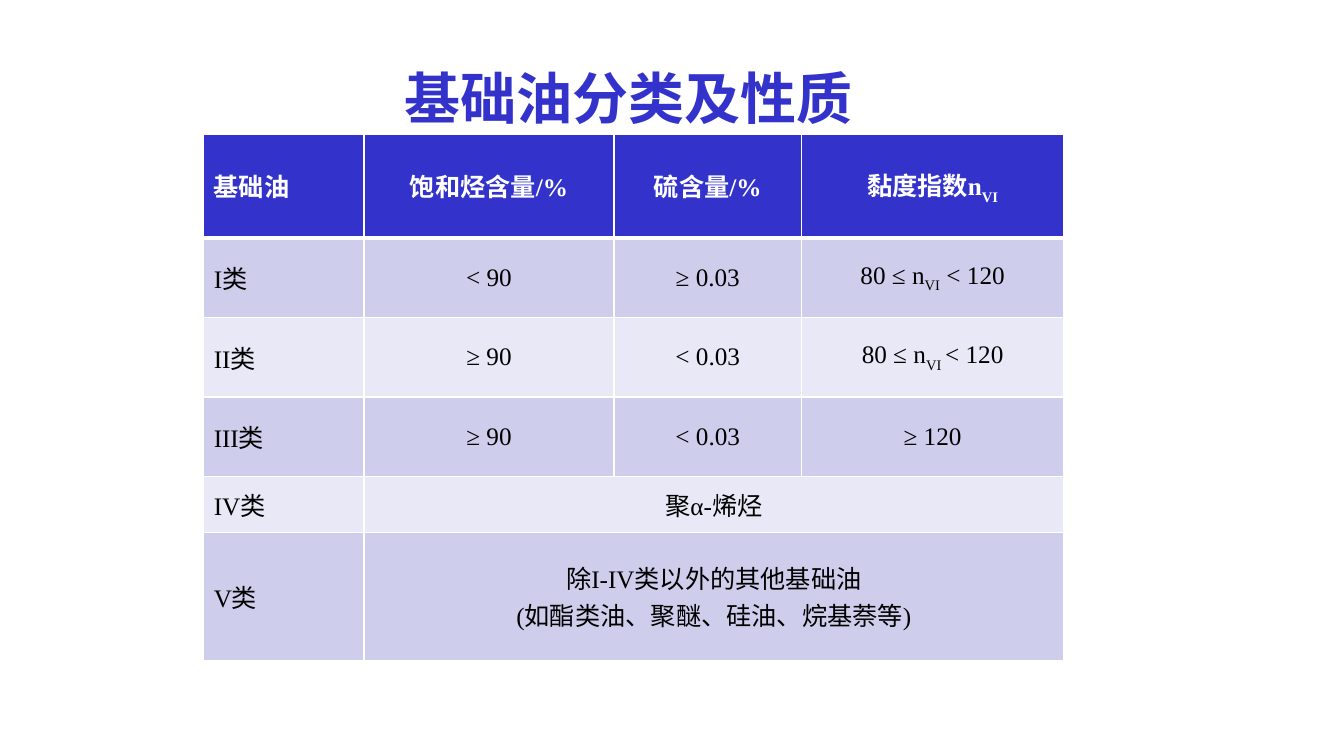
from lxml import etree
from pptx import Presentation
from pptx.dml.color import RGBColor
from pptx.enum import text as en
from pptx.oxml import ns
from pptx.util import Inches, Pt

BLUE = RGBColor(0x33, 0x33, 0xCC)
WHITE = RGBColor(0xFF, 0xFF, 0xFF)
BLACK = RGBColor(0, 0, 0)
BANDS = (RGBColor(0xE8, 0xE8, 0xF6), RGBColor(0xCE, 0xCE, 0xEC))
HAN = "Noto Sans CJK SC"
LATIN = "Times New Roman"

COLS = (1.59, 2.48, 1.86, 2.6)
HEIGHTS = (1.03, 0.79, 0.79, 0.79, 0.55, 1.27)
# Text between underscores is subscript; a short row spans to the right edge.
ROWS = (
    ("基础油", "饱和烃含量/%", "硫含量/%", "黏度指数n_VI_"),
    ("I类", "< 90", "≥ 0.03", "80 ≤ n_VI_ < 120"),
    ("II类", "≥ 90", "< 0.03", "80 ≤ n_VI _< 120"),
    ("III类", "≥ 90", "< 0.03", "≥ 120"),
    ("IV类", "聚α-烯烃"),
    ("V类", "除I-IV类以外的其他基础油\n(如酯类油、聚醚、硅油、烷基萘等)"),
)


def add_run(para, words, size, face, color, bold, sub=False):
    run = para.add_run()
    run.text = words
    font = run.font
    font.size, font.name, font.bold = Pt(size), face, bold
    font.color.rgb = color
    props = run._r.get_or_add_rPr()
    etree.SubElement(props, ns.qn("a:ea")).set("typeface", HAN)
    if sub:
        props.set("baseline", "-25000")


def add_title(slide):
    title = slide.shapes.title
    title.left, title.top = Inches(3.89), Inches(0.58)
    title.width, title.height = Inches(4.69), Inches(0.77)
    frame = title.text_frame
    frame.word_wrap = False
    frame.auto_size = en.MSO_AUTO_SIZE.NONE
    frame.vertical_anchor = en.MSO_ANCHOR.MIDDLE
    para = frame.paragraphs[0]
    para.alignment = en.PP_ALIGN.CENTER
    add_run(para, "基础油分类及性质", 40, HAN, BLUE, True)


def set_edges(cell, row):
    """Draw white borders, with a thick rule under the header."""
    thick = {0: "lnB", 1: "lnT"}.get(row)
    props = cell._tc.get_or_add_tcPr()
    for side in ("lnL", "lnR", "lnT", "lnB"):
        line = etree.SubElement(props, ns.qn("a:" + side))
        line.set("w", str(Pt(3 if side == thick else 1)))
        fill = etree.SubElement(line, ns.qn("a:solidFill"))
        etree.SubElement(fill, ns.qn("a:srgbClr")).set("val", str(WHITE))


def fill_cell(cell, words, row, col):
    head = row == 0
    cell.vertical_anchor = en.MSO_ANCHOR.MIDDLE
    frame = cell.text_frame
    for i, line in enumerate(words.split("\n")):
        para = frame.add_paragraph() if i else frame.paragraphs[0]
        para.alignment = en.PP_ALIGN.CENTER if col else en.PP_ALIGN.LEFT
        for j, part in enumerate(line.split("_")):
            if part:
                add_run(para, part, 18, LATIN, WHITE if head else BLACK,
                        head, sub=j % 2 == 1)


def add_grid(slide):
    frame = slide.shapes.add_table(
        len(ROWS), len(COLS), Inches(2.02), Inches(1.33),
        Inches(sum(COLS)), Inches(sum(HEIGHTS)))
    table = frame.table
    for col, width in zip(table.columns, COLS):
        col.width = Inches(width)
    for r, (words, height) in enumerate(zip(ROWS, HEIGHTS)):
        table.rows[r].height = Inches(height)
        for c in range(len(COLS)):
            cell = table.cell(r, c)
            set_edges(cell, r)
            cell.fill.solid()
            cell.fill.fore_color.rgb = BANDS[r % 2] if r else BLUE
        if len(words) < len(COLS):
            table.cell(r, len(words) - 1).merge(table.cell(r, len(COLS) - 1))
        for c, entry in enumerate(words):
            fill_cell(table.cell(r, c), entry, r, c)


def main():
    deck = Presentation()
    deck.slide_width, deck.slide_height = Inches(13.33), Inches(7.5)
    slide = deck.slides.add_slide(deck.slide_layouts[5])
    add_title(slide)
    add_grid(slide)
    deck.save("out.pptx")


if __name__ == "__main__":
    main()
